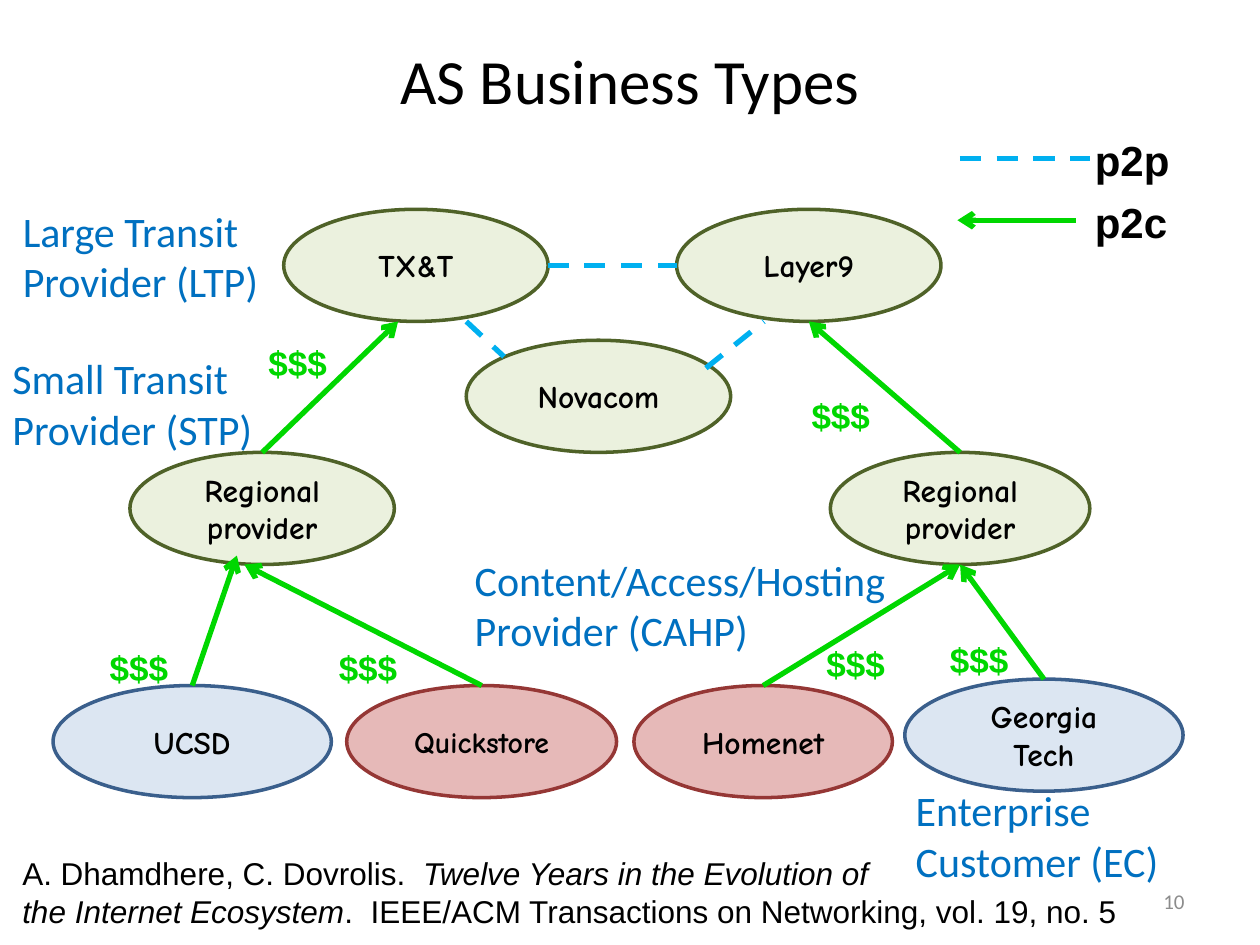
import lxml.etree
import pptx
import pptx.dml.color
import pptx.enum.dml
import pptx.enum.shapes
import pptx.enum.text
import pptx.oxml.ns
import pptx.util

Cm = pptx.util.Cm
RGBColor = pptx.dml.color.RGBColor
ALIGN = pptx.enum.text.PP_ALIGN
ANCHOR = pptx.enum.text.MSO_ANCHOR

BLACK = RGBColor(0x00, 0x00, 0x00)
GREY = RGBColor(0x8C, 0x8C, 0x8C)
BLUE = RGBColor(0x00, 0x70, 0xC0)
PEER_CYAN = RGBColor(0x00, 0xB0, 0xF0)
MONEY_GREEN = RGBColor(0x00, 0xD7, 0x00)
TRANSIT = (RGBColor(0xEB, 0xF1, 0xDE), RGBColor(0x4F, 0x62, 0x28))
ENTERPRISE = (RGBColor(0xDC, 0xE6, 0xF2), RGBColor(0x3A, 0x5F, 0x8C))
CONTENT = (RGBColor(0xE6, 0xB9, 0xB8), RGBColor(0x95, 0x37, 0x35))

NODE_HEIGHT = 2.26
NODES = {
    "campus": ("UCSD", 0, 9.6, 5.61, ENTERPRISE, 18),
    "west": ("Regional provider", 1.55, 4.9, 5.33, TRANSIT, 18),
    "east": ("Regional provider", 15.67, 4.9, 5.23, TRANSIT, 18),
    "institute": ("Georgia Tech", 17.17, 9.47, 5.61, ENTERPRISE, 18),
    "hosting": ("Quickstore", 5.92, 9.6, 5.44, CONTENT, 17),
    "access": ("Homenet", 11.71, 9.6, 5.21, CONTENT, 18),
    "carrier_left": ("TX&T", 4.65, 0, 5.33, TRANSIT, 18),
    "carrier_right": ("Layer9", 12.57, 0, 5.33, TRANSIT, 18),
    "carrier_middle": ("Novacom", 8.33, 2.64, 5.33, TRANSIT, 18),
}
CUSTOMER_LINKS = [
    ("west", "carrier_left", -0.36, 0),
    ("east", "carrier_right", 0, 0),
    ("campus", "west", -0.51, -0.18),
    ("institute", "east", 0, 0),
    ("hosting", "west", -0.36, 0),
    ("access", "east", 0, 0),
]
PEER_LINKS = [
    (9.97, 1.13, 12.57, 1.13),
    (13.16, 3.2, 14.33, 2.26),
    (8.33, 2.26, 9.09, 2.97),
]
ROLES = [
    ("Content/Access/Hosting Provider (CAHP)", 8.25, 6.83, 9.53),
    ("Small Transit Provider (STP)", -1.07, 2.77, 6.99),
    ("Large Transit Provider (LTP)", -0.86, -0.2, 6.99),
    ("Enterprise Customer (EC)", 17.14, 11.48, 6.99),
]
PAYMENTS = [(5.51, 8.69), (0.89, 8.69), (15.34, 8.61),
            (17.83, 8.53), (15.04, 3.61), (4.09, 2.54)]


def write_text(paragraph, text, font="Arial", size=18, color=BLACK,
               bold=False, italic=False, align=ALIGN.LEFT):
    """Append a formatted run to a paragraph."""
    paragraph.alignment = align
    run = paragraph.add_run()
    run.text = text
    run.font.name = font
    run.font.size = pptx.util.Pt(size)
    run.font.bold = bold
    run.font.italic = italic
    run.font.color.rgb = color


def add_text_box(slide, box, wrap=True, anchor=ANCHOR.TOP):
    """Add an empty text box and return its first paragraph."""
    frame = slide.shapes.add_textbox(*(Cm(length) for length in box)).text_frame
    frame.word_wrap = wrap
    frame.vertical_anchor = anchor
    return frame.paragraphs[0]


def add_link(slide, start, end, peer=False):
    """Draw a dashed peer line or an arrow from customer to provider."""
    connector = slide.shapes.add_connector(
        pptx.enum.shapes.MSO_CONNECTOR.STRAIGHT,
        *(Cm(length) for length in (*start, *end)))
    connector.line.width = pptx.util.Pt(3)
    connector.line.color.rgb = PEER_CYAN if peer else MONEY_GREEN
    qualified = pptx.oxml.ns.qn
    if peer:
        connector.line.dash_style = pptx.enum.dml.MSO_LINE.DASH
    else:
        lxml.etree.SubElement(connector.line._get_or_add_ln(),
                              qualified("a:tailEnd"), type="arrow")
    lxml.etree.SubElement(connector._element.spPr, qualified("a:effectLst"))


def add_node(slide, box, text, colors, size):
    """Draw one network as a labelled ellipse."""
    ellipse = slide.shapes.add_shape(pptx.enum.shapes.MSO_SHAPE.OVAL,
                                     *(Cm(length) for length in box))
    ellipse.shadow.inherit = False
    ellipse.fill.solid()
    ellipse.fill.fore_color.rgb, ellipse.line.color.rgb = colors
    ellipse.line.width = pptx.util.Pt(2)
    ellipse.text_frame.word_wrap = True
    ellipse.text_frame.vertical_anchor = ANCHOR.MIDDLE
    write_text(ellipse.text_frame.paragraphs[0], text, font="Comic Neue",
               size=size, bold=True, align=ALIGN.CENTER)


def add_network(slide, box):
    """Draw the networks and the links between them."""
    left, top = box[:2]
    for text, x, y, width, colors, size in NODES.values():
        add_node(slide, (left + x, top + y, width, NODE_HEIGHT), text, colors, size)
    for customer, provider, shift_x, shift_y in CUSTOMER_LINKS:
        _, x, y, width = NODES[customer][:4]
        _, provider_x, provider_y, provider_width = NODES[provider][:4]
        add_link(slide, (left + x + width / 2, top + y),
                 (left + provider_x + provider_width / 2 + shift_x,
                  top + provider_y + NODE_HEIGHT + shift_y))
    for x1, y1, x2, y2 in PEER_LINKS:
        add_link(slide, (left + x1, top + y1), (left + x2, top + y2), peer=True)


def add_annotations(slide, box):
    """Place the business types and payment marks around the network."""
    left, top = box[:2]
    for text, x, y, width in ROLES:
        paragraph = add_text_box(slide, (left + x, top + y, width, 2.31))
        write_text(paragraph, text, font="Calibri", size=24, color=BLUE)
    for x, y in PAYMENTS:
        paragraph = add_text_box(slide, (left + x, top + y, 1.7, 1.12), wrap=False)
        write_text(paragraph, "$$$", size=20, color=MONEY_GREEN, bold=True)


def add_legend(slide, box):
    """Explain the two kinds of link."""
    left, top, width, height = box
    row_height = height / 2
    add_link(slide, (left + 0.05, top + 0.61), (left + 2.67, top + 0.61), peer=True)
    add_link(slide, (left + 2.39, top + 1.85), (left, top + 1.85))
    for row, text in enumerate(("p2p", "p2c")):
        label_box = (left + 2.52, top + row * row_height, width - 2.52, row_height)
        write_text(add_text_box(slide, label_box, wrap=False), text, size=24, bold=True)


def add_title(slide, box):
    """Write the slide title."""
    write_text(add_text_box(slide, box, anchor=ANCHOR.MIDDLE), "AS Business Types",
               font="Calibri", size=36, align=ALIGN.CENTER)


def add_citation(slide, box):
    """Cite the paper behind the diagram."""
    paragraph = add_text_box(slide, box, wrap=False)
    write_text(paragraph, "A. Dhamdhere, C. Dovrolis.  ")
    write_text(paragraph, "Twelve Years in the Evolution of", italic=True)
    paragraph.add_line_break()
    write_text(paragraph, "the Internet Ecosystem", italic=True)
    write_text(paragraph, ".  IEEE/ACM Transactions on Networking, vol. 19, no. 5")


def add_page_number(slide, box):
    """Write the page number."""
    write_text(add_text_box(slide, box, anchor=ANCHOR.MIDDLE), "10",
               font="Calibri", size=12, color=GREY, align=ALIGN.RIGHT)


def main():
    """Build and save the presentation."""
    presentation = pptx.Presentation()
    presentation.slide_width = Cm(25.4)
    presentation.slide_height = Cm(19.05)
    slide = presentation.slides.add_slide(presentation.slide_layouts[6])
    network_box = (1.07, 4.22, 22.78, 11.86)
    add_page_number(slide, (18.21, 17.65, 5.92, 1.02))
    add_title(slide, (1.27, 0.36, 22.86, 2.46))
    add_network(slide, network_box)
    add_annotations(slide, network_box)
    add_legend(slide, (19.3, 2.59, 4.55, 2.5))
    add_citation(slide, (0.2, 17.09, 22.78, 1.8))
    presentation.save("out.pptx")


if __name__ == "__main__":
    main()
